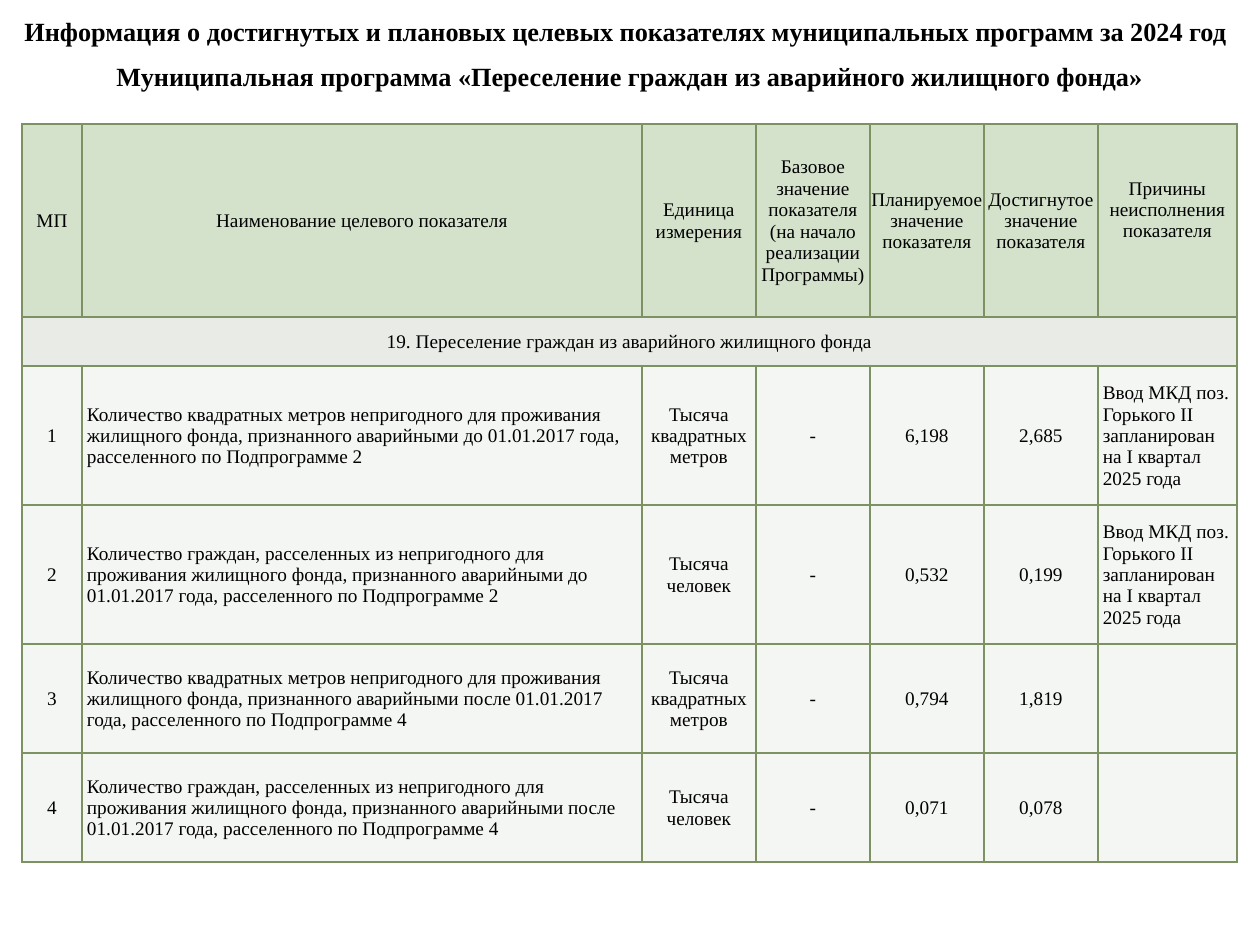
from lxml.etree import SubElement
from pptx import Presentation
from pptx.dml.color import RGBColor
from pptx.enum.text import MSO_ANCHOR, MSO_AUTO_SIZE, PP_ALIGN
from pptx.oxml.ns import qn
from pptx.util import Pt

EMU_PER_PX = 914400 / 126
FONT = "Times New Roman"
BLACK, BORDER = "000000", "7D9263"
HEADER_FILL, PROGRAM_FILL, BODY_FILL = "C2D7B7", "E1E5DC", "F0F3EE"
OPACITY = 70

HEADING = "Информация о достигнутых и плановых целевых показателях муниципальных программ за 2024 год"
SUBHEADING = "Муниципальная программа «Переселение граждан из аварийного жилищного фонда»"
HEADER = [
    "МП",
    "Наименование целевого показателя",
    "Единица измерения",
    "Базовое значение показателя (на начало реализации Программы)",
    "Планируемое значение показателя",
    "Достигнутое значение показателя",
    "Причины неисполнения показателя",
]
PROGRAM = "19. Переселение граждан из аварийного жилищного фонда"
AREA_UNIT, PEOPLE_UNIT = "Тысяча квадратных метров", "Тысяча человек"
REASON = "Ввод МКД поз. Горького II запланирован на I квартал 2025 года"
INDICATORS = [
    ("1", "Количество квадратных метров непригодного для проживания жилищного фонда, "
     "признанного аварийными до 01.01.2017 года, расселенного по Подпрограмме 2",
     AREA_UNIT, "-", "6,198", "2,685", REASON),
    ("2", "Количество граждан, расселенных из непригодного для проживания жилищного фонда, "
     "признанного аварийными до 01.01.2017 года, расселенного по Подпрограмме 2",
     PEOPLE_UNIT, "-", "0,532", "0,199", REASON),
    ("3", "Количество квадратных метров непригодного для проживания жилищного фонда, "
     "признанного аварийными после 01.01.2017 года, расселенного по Подпрограмме 4",
     AREA_UNIT, "-", "0,794", "1,819", ""),
    ("4", "Количество граждан, расселенных из непригодного для проживания жилищного фонда, "
     "признанного аварийными после 01.01.2017 года, расселенного по Подпрограмме 4",
     PEOPLE_UNIT, "-", "0,071", "0,078", ""),
]
COLUMN_WIDTHS = [60, 560, 114, 114, 114, 114, 139]
ROW_HEIGHTS = [193, 49, 139, 139, 109, 109]
NAME_COLUMN, REASON_COLUMN = 1, 6


def px(length):
    return round(length * EMU_PER_PX)


def color(hex_code):
    return RGBColor.from_string(hex_code)


def write(frame, text, size, bold, align):
    frame.word_wrap = True
    paragraph = frame.paragraphs[0]
    paragraph.alignment = align
    font = paragraph.font
    if text:
        run = paragraph.add_run()
        run.text = text
        font = run.font
    font.name, font.size, font.bold = FONT, Pt(size), bold
    font.color.rgb = color(BLACK)


def place_heading(shape, text, top, width):
    shape.left, shape.top, shape.width, shape.height = px(0), px(top), px(width), px(44)
    write(shape.text_frame, text, 15, True, PP_ALIGN.CENTER)
    shape.text_frame.auto_size = MSO_AUTO_SIZE.NONE
    shape.text_frame.vertical_anchor = MSO_ANCHOR.TOP


def add_borders(cell):
    properties = cell._tc.get_or_add_tcPr()
    for index, side in enumerate(("a:lnL", "a:lnR", "a:lnT", "a:lnB")):
        line = properties.makeelement(qn(side), {"w": str(Pt(1))})
        properties.insert(index, line)
        SubElement(SubElement(line, qn("a:solidFill")), qn("a:srgbClr"), val=BORDER)


def format_cell(cell, text, fill, side_margin, align, bottom_margin=0):
    cell.fill.solid()
    cell.fill.fore_color.rgb = color(fill)
    tint = cell._tc.tcPr.find(".//" + qn("a:srgbClr"))
    SubElement(tint, qn("a:alpha"), val=str(OPACITY * 1000))
    add_borders(cell)
    cell.vertical_anchor = MSO_ANCHOR.MIDDLE
    cell.margin_left = cell.margin_right = px(side_margin)
    cell.margin_top, cell.margin_bottom = px(1), px(bottom_margin)
    write(cell.text_frame, text, 11, False, align)


def fill_table(table):
    table.first_row = table.horz_banding = False
    for column, width in zip(table.columns, COLUMN_WIDTHS):
        column.width = px(width)
    for row, height in zip(table.rows, ROW_HEIGHTS):
        row.height = px(height)

    for index, label in enumerate(HEADER):
        bottom = 22 if index == REASON_COLUMN else 0
        format_cell(table.cell(0, index), label, HEADER_FILL, 1, PP_ALIGN.CENTER, bottom)

    for index in range(len(HEADER)):
        text = PROGRAM if index == 0 else ""
        format_cell(table.cell(1, index), text, PROGRAM_FILL, 1, PP_ALIGN.CENTER)
    table.cell(1, 0).merge(table.cell(1, REASON_COLUMN))

    for row, indicator in enumerate(INDICATORS, start=2):
        for index, text in enumerate(indicator):
            left_aligned = index in (NAME_COLUMN, REASON_COLUMN)
            align = PP_ALIGN.LEFT if left_aligned else PP_ALIGN.CENTER
            format_cell(table.cell(row, index), text, BODY_FILL, 5, align)


def main():
    presentation = Presentation()
    presentation.slide_width, presentation.slide_height = px(1260), px(945)
    slide = presentation.slides.add_slide(presentation.slide_layouts[5])
    place_heading(slide.shapes.title, HEADING, 9, 1252)
    place_heading(slide.shapes.add_textbox(0, 0, 0, 0), SUBHEADING, 54, 1260)
    table_frame = slide.shapes.add_table(
        len(ROW_HEIGHTS), len(COLUMN_WIDTHS), px(22), px(124),
        px(sum(COLUMN_WIDTHS)), px(sum(ROW_HEIGHTS)))
    fill_table(table_frame.table)
    presentation.save("out.pptx")


if __name__ == "__main__":
    main()
